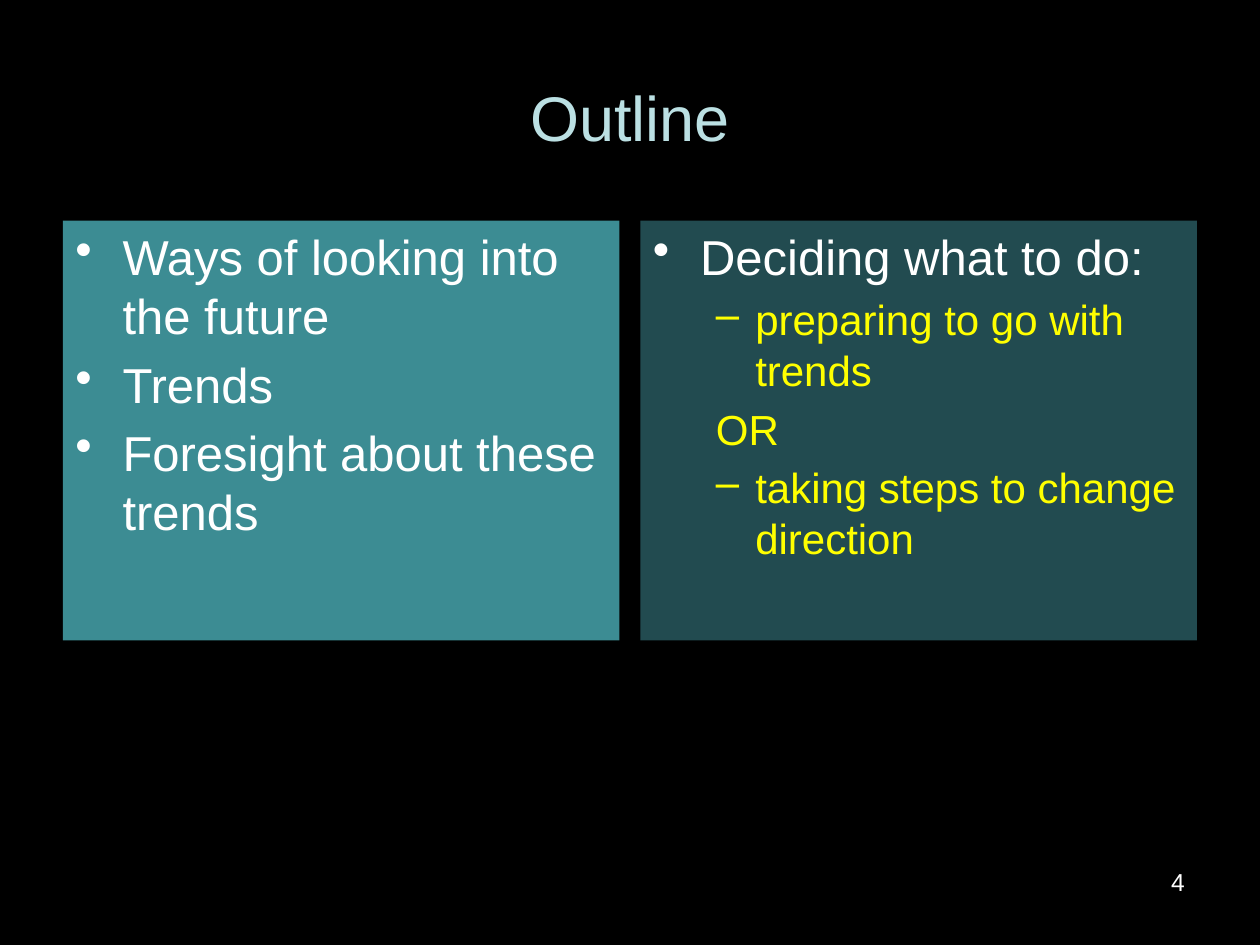
from pptx import Presentation
from pptx.dml.color import RGBColor
from pptx.enum.shapes import MSO_SHAPE
from pptx.enum.text import MSO_ANCHOR, PP_ALIGN
from pptx.oxml.xmlchemy import OxmlElement
from pptx.util import Pt

RECTANGLE = MSO_SHAPE.RECTANGLE
TOP, MIDDLE = MSO_ANCHOR.TOP, MSO_ANCHOR.MIDDLE
LEFT, CENTER, RIGHT = PP_ALIGN.LEFT, PP_ALIGN.CENTER, PP_ALIGN.RIGHT

FONT = "Arial"
COLORS = {
    "background": "000000",
    "title": "BBE0E3",
    "outlook": "3C8C93",
    "decision": "224B50",
    "text": "FFFFFF",
    "detail": "FFFF00",
}

# Paragraph kinds: indent level, left margin, first-line indent, bullet
TOPIC = {"level": 0, "margin": 27, "indent": -27, "bullet": "•",
         "size": 28, "color": "text"}
OPTION = {"level": 1, "margin": 58.5, "indent": -22.5, "bullet": "–",
          "size": 24, "color": "detail"}
JOINER = OPTION | {"margin": 36, "indent": 0, "bullet": None}

MARGIN, GAP = 36, 12
SLIDE_WIDTH, SLIDE_HEIGHT = 720, 540
PANEL_WIDTH = (SLIDE_WIDTH - 2 * MARGIN - GAP) / 2
PANEL_TOP, PANEL_HEIGHT = 126, 240

PANELS = [
    ("outlook", [
        ("Ways of looking into the future", TOPIC),
        ("Trends", TOPIC),
        ("Foresight about these trends", TOPIC),
    ]),
    ("decision", [
        ("Deciding what to do:", TOPIC),
        ("preparing to go with trends", OPTION),
        ("OR", JOINER),
        ("taking steps to change direction", OPTION),
    ]),
]


def rgb(color):
    return RGBColor.from_string(COLORS[color])


def write(paragraph, wording, size, color, align):
    paragraph.alignment = align
    run = paragraph.add_run()
    run.text = wording
    for attribute, value in {"name": FONT, "size": Pt(size)}.items():
        setattr(run.font, attribute, value)
    run.font.color.rgb = rgb(color)


def set_bullet(paragraph, kind):
    """Set the hanging indent and the bullet of a paragraph."""
    properties = paragraph._p.get_or_add_pPr()
    properties.set("marL", str(Pt(kind["margin"])))
    properties.set("indent", str(Pt(kind["indent"])))
    if kind["bullet"]:
        mark = OxmlElement("a:buChar")
        mark.set("char", kind["bullet"])
    else:
        mark = OxmlElement("a:buNone")
    properties.append(mark)


def add_line(slide, box, wording, size, color, align, anchor):
    """Place a single line of text without a panel."""
    frame = slide.shapes.add_textbox(*map(Pt, box)).text_frame
    for attribute, value in {"word_wrap": True, "vertical_anchor": anchor}.items():
        setattr(frame, attribute, value)
    write(frame.paragraphs[0], wording, size, color, align)


def add_panel(slide, box, fill, items):
    panel = slide.shapes.add_shape(RECTANGLE, *map(Pt, box))
    panel.shadow.inherit = False
    panel.fill.solid()
    panel.fill.fore_color.rgb = rgb(fill)
    panel.line.fill.background()
    frame = panel.text_frame
    for attribute, value in {"word_wrap": True, "vertical_anchor": TOP}.items():
        setattr(frame, attribute, value)
    for number, (wording, kind) in enumerate(items):
        paragraph = frame.add_paragraph() if number else frame.paragraphs[0]
        paragraph.level = kind["level"]
        paragraph.space_before = Pt(0.2 * kind["size"])
        write(paragraph, wording, kind["size"], kind["color"], LEFT)
        set_bullet(paragraph, kind)


def main():
    deck = Presentation()
    deck.slide_width, deck.slide_height = Pt(SLIDE_WIDTH), Pt(SLIDE_HEIGHT)
    slide = deck.slides.add_slide(deck.slide_layouts[6])
    slide.background.fill.solid()
    slide.background.fill.fore_color.rgb = rgb("background")

    title_box = (MARGIN, 21.6, SLIDE_WIDTH - 2 * MARGIN, 90)
    add_line(slide, title_box, "Outline", 36, "title", CENTER, MIDDLE)
    for column, (fill, items) in enumerate(PANELS):
        left = MARGIN + column * (PANEL_WIDTH + GAP)
        add_panel(slide, (left, PANEL_TOP, PANEL_WIDTH, PANEL_HEIGHT), fill, items)
    number_width = 168
    number_box = (SLIDE_WIDTH - MARGIN - number_width, 492, number_width, 37.5)
    add_line(slide, number_box, "4", 14, "text", RIGHT, TOP)

    deck.save("out.pptx")


if __name__ == "__main__":
    main()
